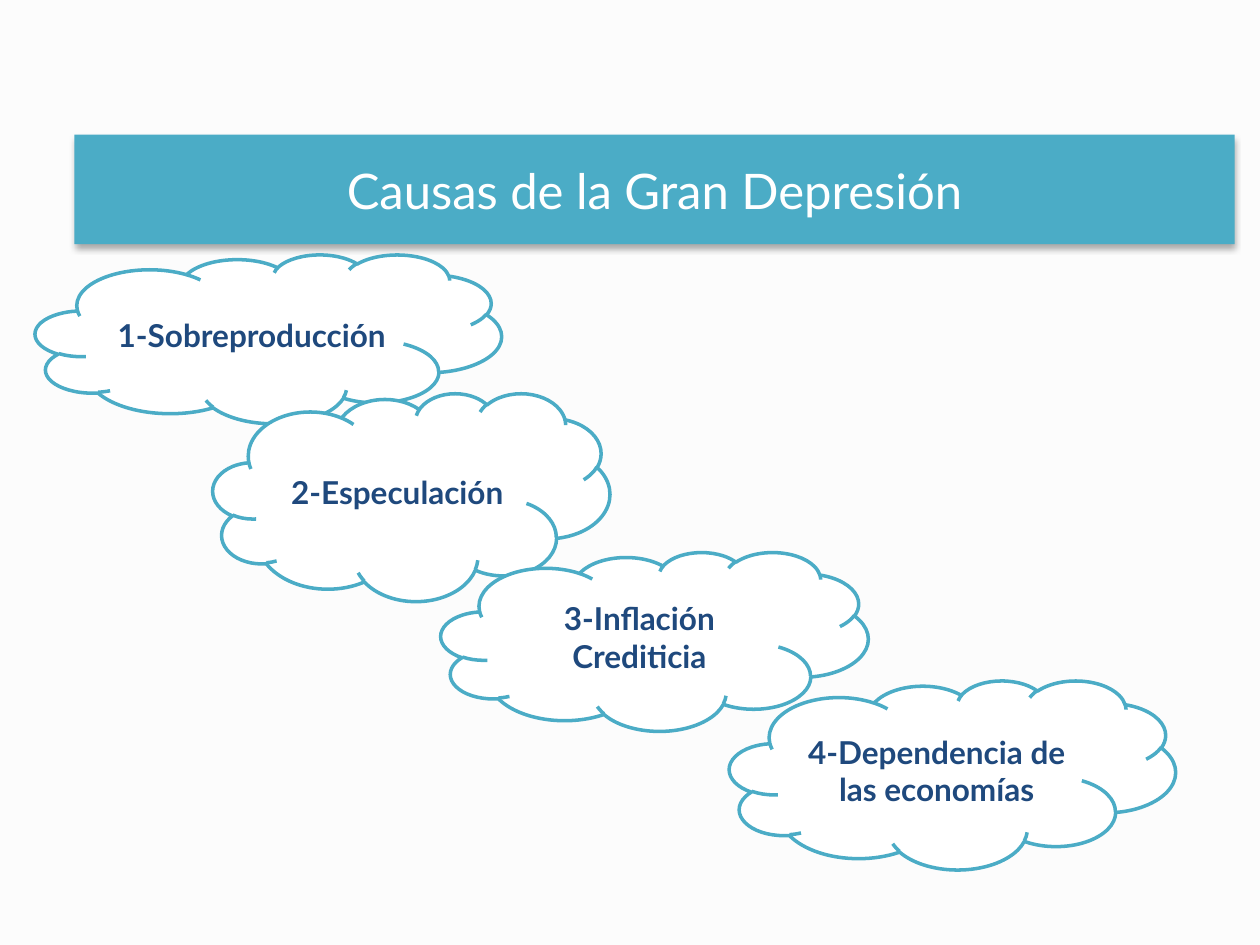
from dataclasses import dataclass

from lxml.etree import SubElement
from pptx import Presentation
from pptx.dml.color import RGBColor
from pptx.enum.shapes import MSO_SHAPE
from pptx.enum.text import MSO_ANCHOR, PP_ALIGN
from pptx.oxml.ns import qn
from pptx.shapes.autoshape import Shape
from pptx.slide import Slide
from pptx.util import Pt

FONT = "Lato"
BACKGROUND = "FCFCFC"
TEAL = "4BACC6"
NAVY = "1F497D"
WHITE = "FFFFFF"


@dataclass(frozen=True)
class Box:
    text: str
    left: float
    top: float
    width: float
    height: float


TITLE = Box("Causas de la Gran Depresión", 42.5, 77, 663, 62.6)
CAUSES = [
    Box("1-Sobreproducción", 20.2, 145.4, 266.4, 96.5),
    Box("2-Especulación", 121.7, 224.6, 226.8, 118.8),
    Box("3-Inflación Crediticia", 252, 315.4, 244.1, 102.2),
    Box("4-Dependencia de las economías", 416.9, 388.8, 254.9, 108),
]


def color(hex_value: str) -> RGBColor:
    return RGBColor.from_string(hex_value)


def write_text(shape: Shape, text: str, *, size: float, font_color: str, bold: bool = False) -> None:
    frame = shape.text_frame
    frame.word_wrap = True
    frame.vertical_anchor = MSO_ANCHOR.MIDDLE
    paragraph = frame.paragraphs[0]
    paragraph.alignment = PP_ALIGN.CENTER
    run = paragraph.add_run()
    run.text = text
    run.font.name = FONT
    run.font.size = Pt(size)
    run.font.bold = bold
    run.font.color.rgb = color(font_color)


def add_box(slide: Slide, box: Box, preset: MSO_SHAPE, fill: str) -> Shape:
    """Add a filled shape without line or shadow."""
    shape = slide.shapes.add_shape(
        preset, Pt(box.left), Pt(box.top), Pt(box.width), Pt(box.height)
    )
    shape.shadow.inherit = False
    shape.fill.solid()
    shape.fill.fore_color.rgb = color(fill)
    shape.line.fill.background()
    return shape


def add_shadow(shape: Shape, *, blur: float, distance: float, opacity: int) -> None:
    """Cast a black shadow straight down; opacity is in percent."""
    effects = shape.element.spPr.find(qn("a:effectLst"))
    shadow = SubElement(
        effects,
        qn("a:outerShdw"),
        blurRad=str(Pt(blur)),
        dist=str(Pt(distance)),
        dir=str(90 * 60000),
        rotWithShape="0",
    )
    shadow_color = SubElement(shadow, qn("a:srgbClr"), val="000000")
    SubElement(shadow_color, qn("a:alpha"), val=str(opacity * 1000))


def add_title(slide: Slide, box: Box) -> None:
    banner = add_box(slide, box, MSO_SHAPE.RECTANGLE, TEAL)
    add_shadow(banner, blur=3.5, distance=2.2, opacity=32)
    write_text(banner, box.text, size=28, font_color=WHITE)


def add_cause(slide: Slide, box: Box) -> None:
    cloud = add_box(slide, box, MSO_SHAPE.CLOUD, WHITE)
    cloud.line.color.rgb = color(TEAL)
    cloud.line.width = Pt(2)
    write_text(cloud, box.text, size=18, font_color=NAVY, bold=True)


def main() -> None:
    presentation = Presentation()
    presentation.slide_width = Pt(720)
    presentation.slide_height = Pt(540)
    slide = presentation.slides.add_slide(presentation.slide_layouts[6])
    slide.background.fill.solid()
    slide.background.fill.fore_color.rgb = color(BACKGROUND)

    add_title(slide, TITLE)
    for cause in CAUSES:
        add_cause(slide, cause)

    presentation.save("out.pptx")


if __name__ == "__main__":
    main()
